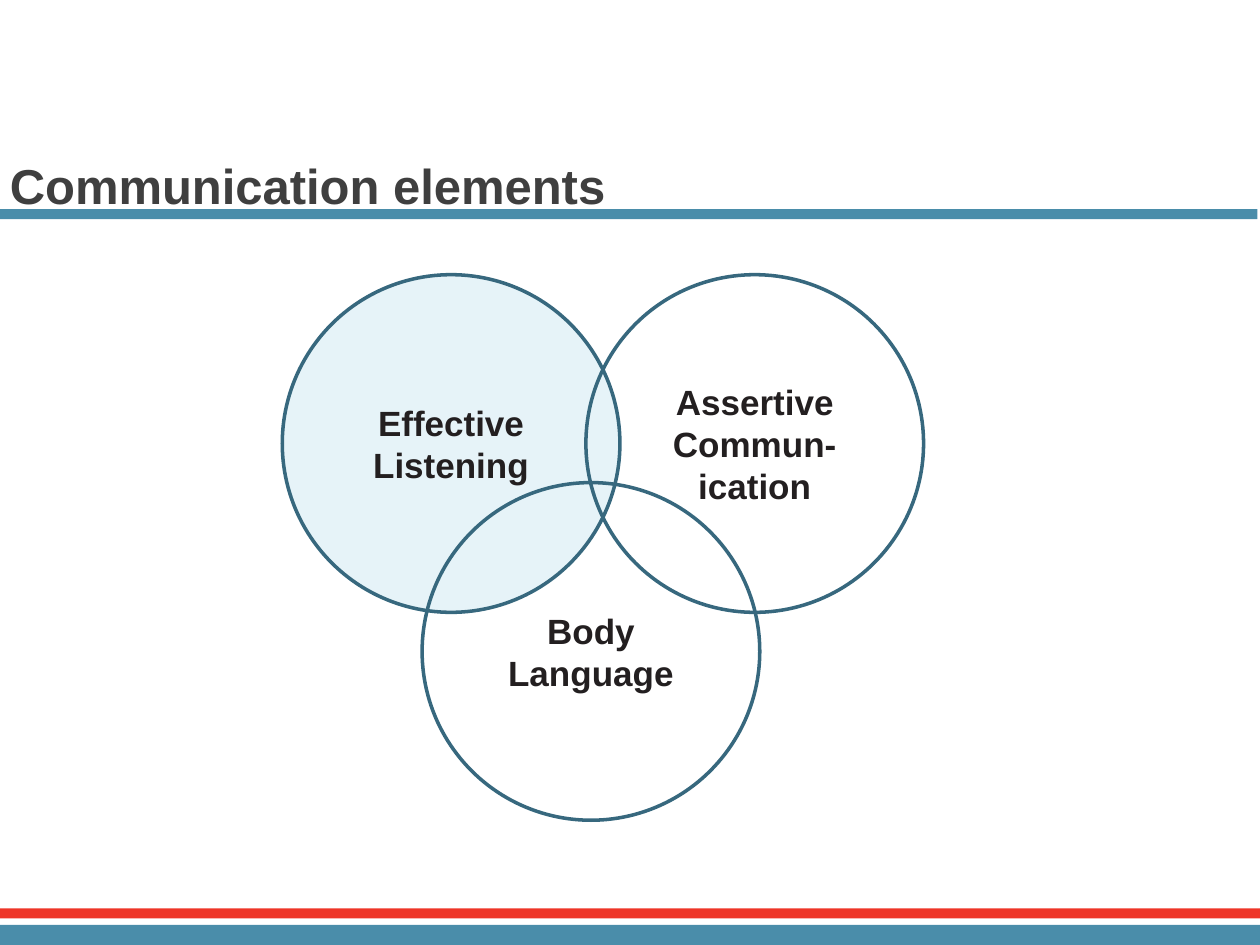
"""Build a slide showing three overlapping elements of communication."""
import pptx
import pptx.util
from pptx.dml.color import RGBColor
from pptx.enum.shapes import MSO_SHAPE
from pptx.enum.text import MSO_ANCHOR, PP_ALIGN

TEAL = RGBColor(0x4A, 0x8D, 0xAA)
RED = RGBColor(0xEE, 0x35, 0x28)
PALE_BLUE = RGBColor(0xE6, 0xF3, 0xF8)
OUTLINE = RGBColor(0x37, 0x68, 0x7E)
TITLE_GREY = RGBColor(0x3F, 0x3F, 0x3F)
INK = RGBColor(0x23, 0x1F, 0x20)

WIDTH, HEIGHT = 10, 7.5
TITLE = "Communication elements"
TITLE_LEFT = -0.02
BANDS = [
    (TITLE_LEFT, 1.66, 0.08, TEAL),
    (0, HEIGHT - 0.16, 0.16, TEAL),
    (0, 7.21, 0.08, RED),
]
DIAMETER = 2.68
VENN_LEFT, VENN_TOP = 2.24, 2.18
CIRCLES = [
    ("Effective Listening", 0, 0, PALE_BLUE),
    ("Body Language", 1.11, 1.65, None),
    ("Assertive Commun-ication", 2.41, 0, None),
]


def add_figure(slide, kind, left, top, width, height, fill):
    figure = slide.shapes.add_shape(
        kind, *map(pptx.util.Inches, (left, top, width, height)))
    figure.shadow.inherit = False
    if fill is None:
        figure.fill.background()
    else:
        figure.fill.solid()
        figure.fill.fore_color.rgb = fill
    figure.line.fill.background()
    return figure


def write(frame, text, size, color, anchor, alignment):
    frame.word_wrap = True
    frame.vertical_anchor = anchor
    paragraph = frame.paragraphs[0]
    paragraph.text = text
    paragraph.alignment = alignment
    paragraph.font.name = "Arial"
    paragraph.font.size = pptx.util.Pt(size)
    paragraph.font.bold = True
    paragraph.font.color.rgb = color
    return paragraph


def main():
    deck = pptx.Presentation()
    deck.slide_width = pptx.util.Inches(WIDTH)
    deck.slide_height = pptx.util.Inches(HEIGHT)
    slide = deck.slides.add_slide(deck.slide_layouts[6])

    for left, top, height, color in BANDS:
        add_figure(slide, MSO_SHAPE.RECTANGLE, left, top, WIDTH, height, color)

    title = slide.shapes.add_textbox(
        *map(pptx.util.Inches, (TITLE_LEFT, 1.11, 6.77, 0.64)))
    heading = write(title.text_frame, TITLE, 28, TITLE_GREY,
                    MSO_ANCHOR.BOTTOM, PP_ALIGN.LEFT)
    heading.line_spacing = 0.85

    for label, across, down, fill in CIRCLES:
        circle = add_figure(slide, MSO_SHAPE.OVAL, VENN_LEFT + across,
                            VENN_TOP + down, DIAMETER, DIAMETER, fill)
        circle.line.color.rgb = OUTLINE
        circle.line.width = pptx.util.Pt(2)
        write(circle.text_frame, label, 20, INK,
              MSO_ANCHOR.MIDDLE, PP_ALIGN.CENTER)

    deck.save("out.pptx")


if __name__ == "__main__":
    main()
